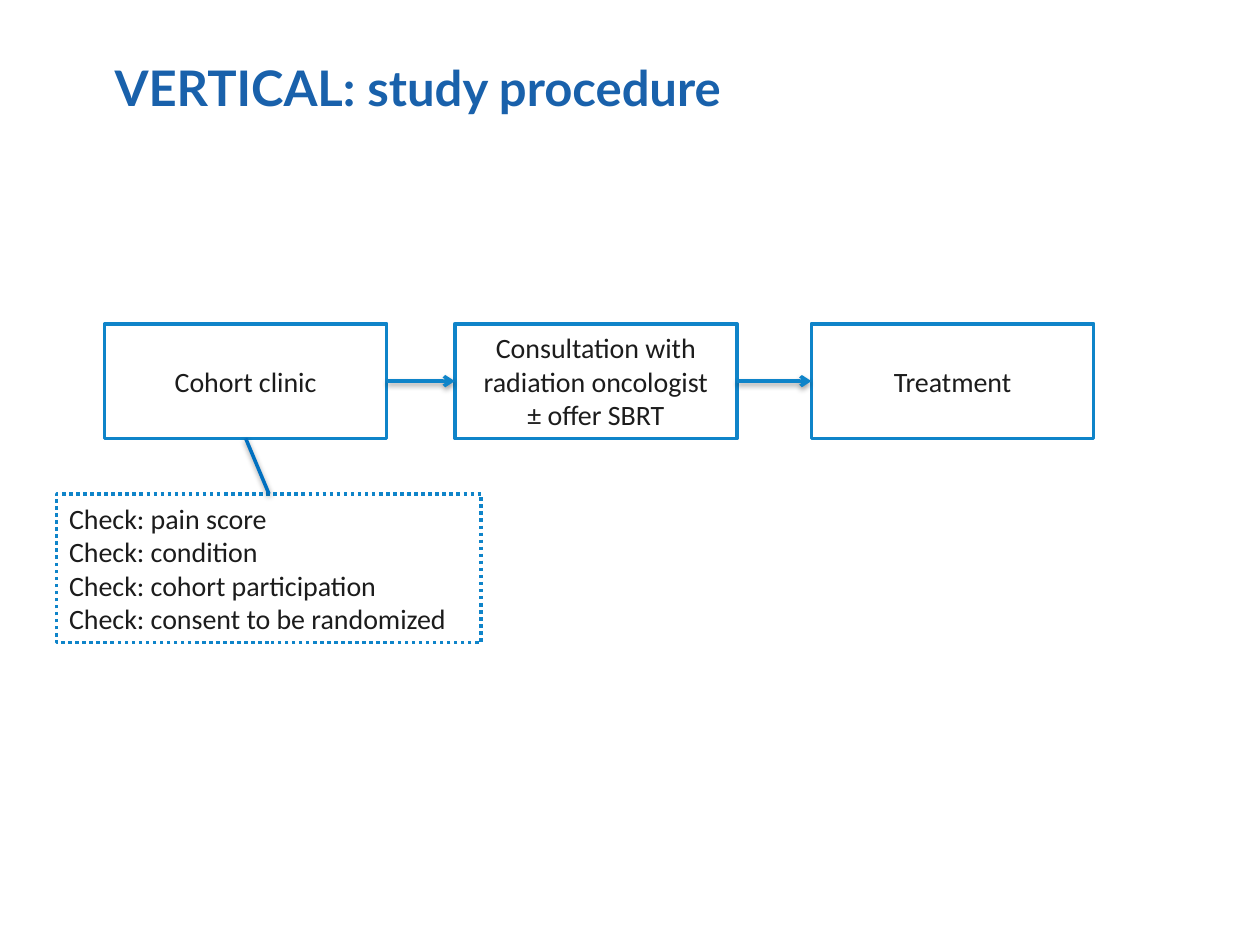
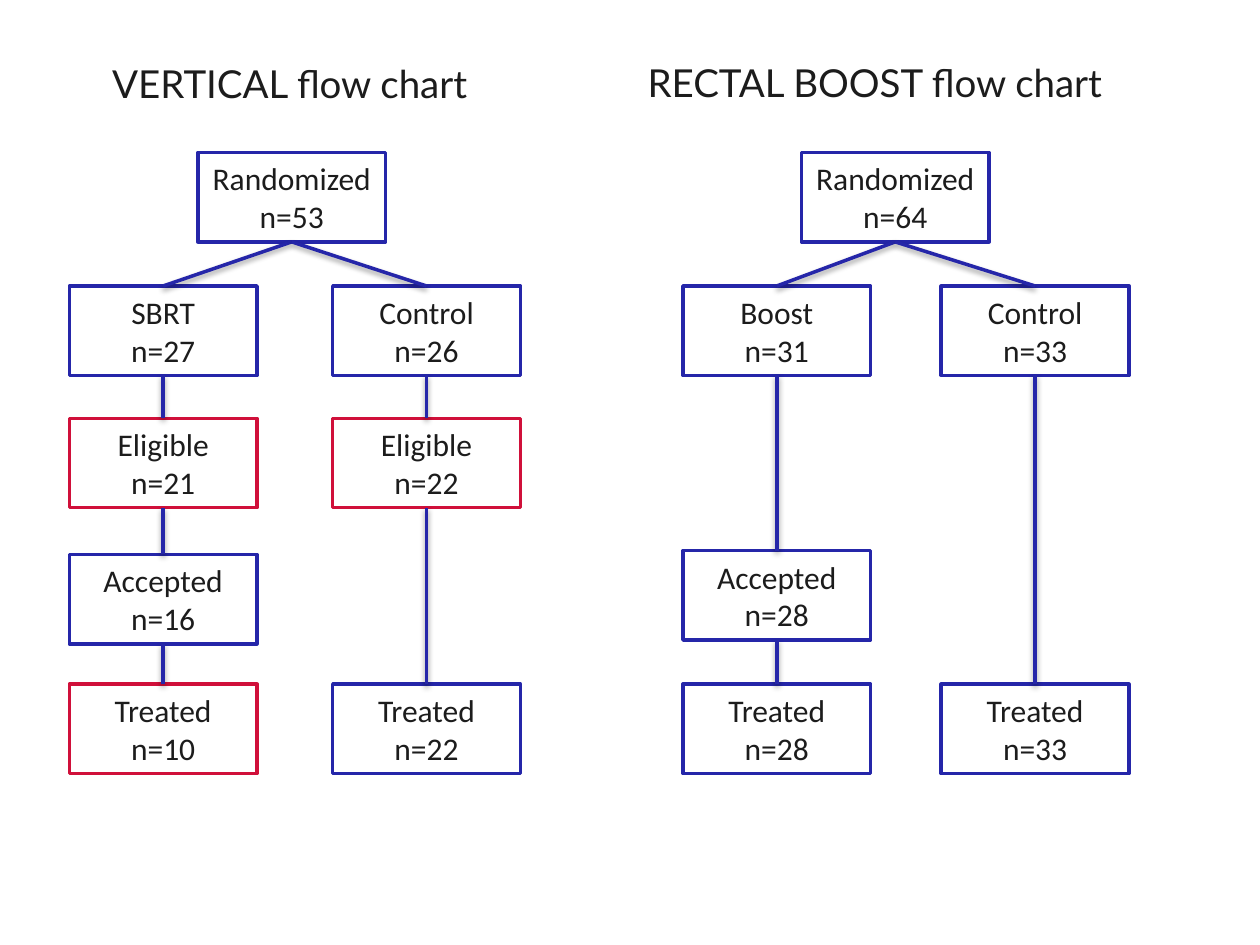
from dataclasses import dataclass
from itertools import pairwise

from lxml import etree
from pptx import Presentation
from pptx.dml.color import RGBColor
from pptx.enum.dml import MSO_LINE
from pptx.enum.shapes import MSO_CONNECTOR, MSO_SHAPE
from pptx.enum.text import MSO_ANCHOR, MSO_AUTO_SIZE, PP_ALIGN
from pptx.oxml import parse_xml
from pptx.oxml.ns import nsdecls, qn
from pptx.util import Inches, Pt

TITLE_ONLY, TWO_CONTENT = 5, 3
TOP, LEFT, BOTTOM, RIGHT = range(4)  # connection sites of a rectangle

SHADOW = f"""<a:effectLst {nsdecls("a")}>
  <a:outerShdw blurRad="40000" dist="20000" dir="5400000" rotWithShape="0">
    <a:srgbClr val="000000"><a:alpha val="38000"/></a:srgbClr>
  </a:outerShdw>
</a:effectLst>"""


@dataclass(frozen=True)
class Theme:
    white: str = "FFFFFF"
    ink: str = "1C1C1C"
    title: str = "1961AB"
    process: str = "0F84C9"
    note_link: str = "0070C0"
    flow: str = "2526A9"
    loss: str = "D0103A"
    heading_font: str = "Lato"
    body_font: str = "Calibri"
    title_size: int = 28
    heading_size: int = 22
    flow_size: int = 18
    process_size: int = 16
    line_width: int = 2


def assign(target, values):
    for name, value in values.items():
        setattr(target, name, value)


class SlideBuilder:
    def __init__(self, deck, theme):
        self.deck = deck
        self.theme = theme
        self.page = None

    def new_page(self, layout):
        self.page = self.deck.slides.add_slide(self.deck.slide_layouts[layout])

    def set_text(self, shape, lines, size, font, color, bold=False,
                 align=PP_ALIGN.CENTER, anchor=MSO_ANCHOR.MIDDLE, side_inset=0.1):
        frame = shape.text_frame
        assign(frame, dict(
            word_wrap=True, auto_size=MSO_AUTO_SIZE.NONE, vertical_anchor=anchor,
            margin_left=Inches(side_inset), margin_right=Inches(side_inset),
            margin_top=Inches(0.05), margin_bottom=Inches(0.05)))
        frame.text = "\n".join(lines)
        for para in frame.paragraphs:
            assign(para, dict(alignment=align, space_before=Pt(0)))
            for span in para.runs:
                assign(span.font, dict(size=Pt(size), name=font, bold=bold))
                span.font.color.rgb = RGBColor.from_string(color)

    def placeholder(self, shape, bounds, text, size, color, bold=False):
        """Move a template placeholder and give it one unbulleted heading line."""
        assign(shape, dict(zip(("left", "top", "width", "height"), map(Inches, bounds))))
        self.set_text(shape, [text], size, self.theme.heading_font, color, bold,
                      PP_ALIGN.LEFT, MSO_ANCHOR.TOP)
        properties = shape.text_frame.paragraphs[0]._p.get_or_add_pPr()
        for name in ("marL", "indent"):
            properties.set(name, "0")
        etree.SubElement(properties, qn("a:buNone"))

    def box(self, bounds, lines, size, color, dash=None, **text_format):
        box = self.page.shapes.add_shape(MSO_SHAPE.RECTANGLE, *map(Inches, bounds))
        box.shadow.inherit = False
        box.fill.solid()
        box.fill.fore_color.rgb = RGBColor.from_string(self.theme.white)
        self.stroke(box, color)
        if dash:
            box.line.dash_style = dash
        self.set_text(box, lines, size, self.theme.body_font, self.theme.ink, **text_format)
        return box

    def stroke(self, shape, color):
        shape.line.color.rgb = RGBColor.from_string(color)
        shape.line.width = Pt(self.theme.line_width)

    def connect(self, start, end, color, sites=(BOTTOM, TOP), arrow=False):
        link = self.page.shapes.add_connector(MSO_CONNECTOR.STRAIGHT, 0, 0, 0, 0)
        link.begin_connect(start, sites[0])
        link.end_connect(end, sites[1])
        self.stroke(link, color)
        if arrow:
            etree.SubElement(link.line._get_or_add_ln(), qn("a:tailEnd"), type="arrow")
        link._element.spPr.append(parse_xml(SHADOW))


def build_procedure(builder):
    theme = builder.theme
    builder.new_page(TITLE_ONLY)
    builder.placeholder(builder.page.shapes.title, (0.81, 0.41, 8.25, 0.89),
                        "VERTICAL: study procedure", theme.title_size, theme.title, True)

    stages = {
        0.83: ["Cohort clinic"],
        3.61: ["Consultation with radiation oncologist", "± offer SBRT"],
        6.44: ["Treatment"],
    }
    boxes = [builder.box((left, 2.57, 2.24, 0.91), lines, theme.process_size, theme.process)
             for left, lines in stages.items()]
    for start, end in pairwise(boxes):
        builder.connect(start, end, theme.process, (RIGHT, LEFT), arrow=True)

    subjects = ["pain score", "condition", "cohort participation", "consent to be randomized"]
    checks = builder.box((0.45, 3.92, 3.37, 1.18), [f"Check: {item}" for item in subjects],
                         theme.process_size, theme.process, MSO_LINE.ROUND_DOT,
                         align=PP_ALIGN.LEFT)
    builder.connect(boxes[0], checks, theme.note_link)


def draw_flow(builder, root_left, randomized, arms, accepted_top):
    """Draw one trial: the randomized box, then a column of steps for each arm."""
    theme = builder.theme
    tops = {"Randomized": 1.21, "Eligible": 3.32, "Accepted": accepted_top, "Treated": 5.43}
    arm_top = 2.27

    def step_box(left, label, count, color=theme.flow):
        bounds = (left, tops.get(label, arm_top), 1.49, 0.71)
        return builder.box(bounds, [label, f"n={count}"], theme.flow_size, color,
                           side_inset=0.05)

    root = step_box(root_left, "Randomized", randomized)
    for left, steps in arms.items():
        column = [root] + [step_box(left, *step) for step in steps]
        for start, end in pairwise(column):
            builder.connect(start, end, theme.flow)


def build_flow_charts(builder):
    theme = builder.theme
    builder.new_page(TWO_CONTENT)
    title, *bodies = list(builder.page.placeholders)[:3]
    title._element.getparent().remove(title._element)
    headings = [
        ((0.79, 0.43, 4.01, 5.65), "VERTICAL flow chart"),
        ((5.04, 0.42, 4.01, 5.67), "RECTAL BOOST flow chart"),
    ]
    for body, (bounds, text) in zip(bodies, headings):
        builder.placeholder(body, bounds, text, theme.heading_size, theme.ink)

    draw_flow(builder, 1.57, 53, {
        0.55: [("SBRT", 27), ("Eligible", 21, theme.loss), ("Accepted", 16),
               ("Treated", 10, theme.loss)],
        2.64: [("Control", 26), ("Eligible", 22, theme.loss), ("Treated", 22)],
    }, accepted_top=4.4)
    draw_flow(builder, 6.36, 64, {
        5.42: [("Boost", 31), ("Accepted", 28), ("Treated", 28)],
        7.47: [("Control", 33), ("Treated", 33)],
    }, accepted_top=4.37)


def main():
    deck = Presentation()
    assign(deck, dict(slide_width=Inches(10), slide_height=Inches(7.5)))
    builder = SlideBuilder(deck, Theme())
    build_procedure(builder)
    build_flow_charts(builder)
    deck.save("out.pptx")


if __name__ == "__main__":
    main()
